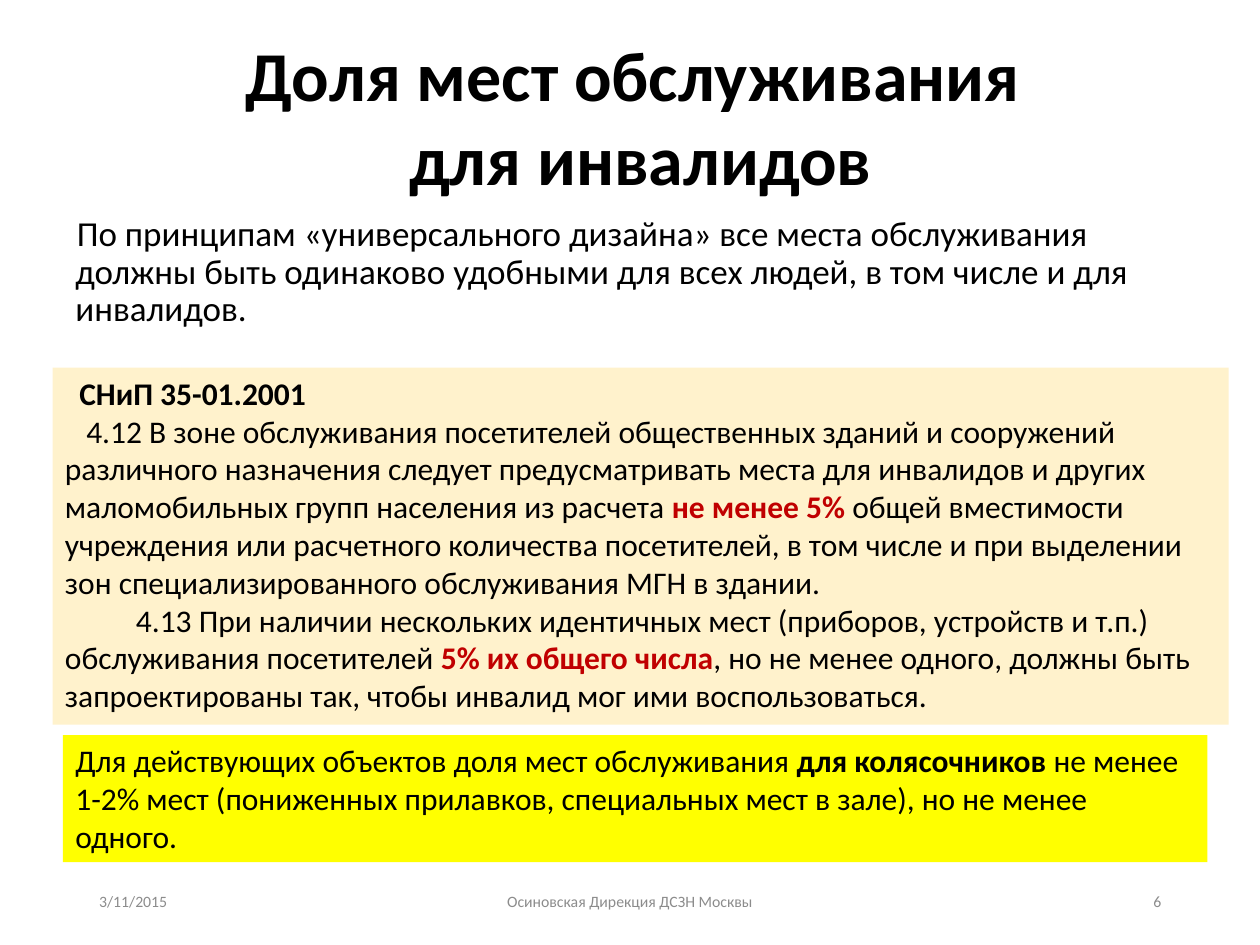
from pptx import Presentation
from pptx.dml.color import RGBColor
from pptx.enum.shapes import MSO_SHAPE
from pptx.enum.text import MSO_ANCHOR, PP_ALIGN
from pptx.util import Cm, Pt

FONT = "Calibri"
COLORS = {
    "text": "000000",
    "accent": "C00000",
    "footer": "8C8C8C",
    "intro": "FFFFFF",
    "norms": "FFF2CC",
    "note": "FFFF00",
}


def rgb(name):
    return RGBColor.from_string(COLORS[name])


def style_runs(p, size, color="text", bold=False):
    for r in p.runs:
        r.font.name = FONT
        r.font.size = Pt(size)
        r.font.bold = bold
        r.font.color.rgb = rgb(color)


def add_text(slide, box, text, size, color="text", bold=False, align=PP_ALIGN.LEFT):
    """Add a vertically centred text box with one paragraph."""
    tf = slide.shapes.add_textbox(*map(Cm, box)).text_frame
    tf.word_wrap = True
    tf.vertical_anchor = MSO_ANCHOR.MIDDLE
    p = tf.paragraphs[0]
    p.text = text
    p.alignment = align
    style_runs(p, size, color, bold)


def add_panel(slide, box, fill, paragraphs, size, line_spacing=1.0):
    """Add a filled box; each paragraph is (first-line indent, [(text, color, bold)])."""
    sp = slide.shapes.add_shape(MSO_SHAPE.RECTANGLE, *map(Cm, box))
    sp.shadow.inherit = False
    sp.fill.solid()
    sp.fill.fore_color.rgb = rgb(fill)
    sp.line.fill.background()
    tf = sp.text_frame
    tf.word_wrap = True
    tf.vertical_anchor = MSO_ANCHOR.TOP
    for i, (indent, pieces) in enumerate(paragraphs):
        p = tf.add_paragraph() if i else tf.paragraphs[0]
        p.alignment = PP_ALIGN.LEFT
        p.line_spacing = line_spacing
        pPr = p._p.get_or_add_pPr()
        pPr.set("marL", "0")
        pPr.set("indent", str(Cm(indent)))
        for text, color, bold in pieces:
            r = p.add_run()
            r.text = text
            r.font.name = FONT
            r.font.size = Pt(size)
            r.font.bold = bold
            r.font.color.rgb = rgb(color)


def main():
    prs = Presentation()
    prs.slide_width, prs.slide_height = Cm(25.4), Cm(19.05)
    slide = prs.slides.add_slide(prs.slide_layouts[6])

    add_text(slide, (1.48, 0.42, 22.86, 3.81),
             "Доля мест обслуживания \vдля инвалидов",
             40, bold=True, align=PP_ALIGN.CENTER)

    add_panel(slide, (1.27, 4.23, 23.07, 2.96), "intro", [
        (0.03, [("По принципам «универсального дизайна» все места обслуживания должны быть "
                 "одинаково удобными для всех людей, в том числе и для инвалидов.",
                 "text", False)]),
    ], 20, line_spacing=0.9)

    add_panel(slide, (1.06, 7.41, 23.71, 7.2), "norms", [
        (0.29, [("СНиП 35-01.2001", "text", True)]),
        (0.43, [
            ("4.12 В зоне обслуживания посетителей общественных зданий и сооружений "
             "различного назначения следует предусматривать места для инвалидов и других "
             "маломобильных групп населения из расчета ", "text", False),
            ("не менее 5%", "accent", True),
            (" общей вместимости учреждения или расчетного количества посетителей, в том "
             "числе и при выделении зон специализированного обслуживания МГН в здании.",
             "text", False),
        ]),
        (1.43, [
            ("4.13 При наличии нескольких идентичных мест (приборов, устройств и т.п.) "
             "обслуживания посетителей ", "text", False),
            ("5% их общего числа", "accent", True),
            (", но не менее одного, должны быть запроектированы так, чтобы инвалид мог ими "
             "воспользоваться.", "text", False),
        ]),
    ], 18)

    add_panel(slide, (1.27, 14.82, 23.07, 2.56), "note", [
        (0, [
            ("Для действующих объектов доля мест обслуживания ", "text", False),
            ("для колясочников ", "text", True),
            ("не менее 1-2% мест (пониженных прилавков, специальных мест в зале), "
             "но не менее одного.", "text", False),
        ]),
    ], 18)

    for left, width, text, align in (
        (1.75, 5.72, "3/11/2015", PP_ALIGN.LEFT),
        (8.41, 8.57, "Осиновская Дирекция ДСЗН Москвы", PP_ALIGN.CENTER),
        (17.94, 5.72, "6", PP_ALIGN.RIGHT),
    ):
        add_text(slide, (left, 17.65, width, 1.02), text, 9, "footer", align=align)

    prs.save("out.pptx")


if __name__ == "__main__":
    main()
